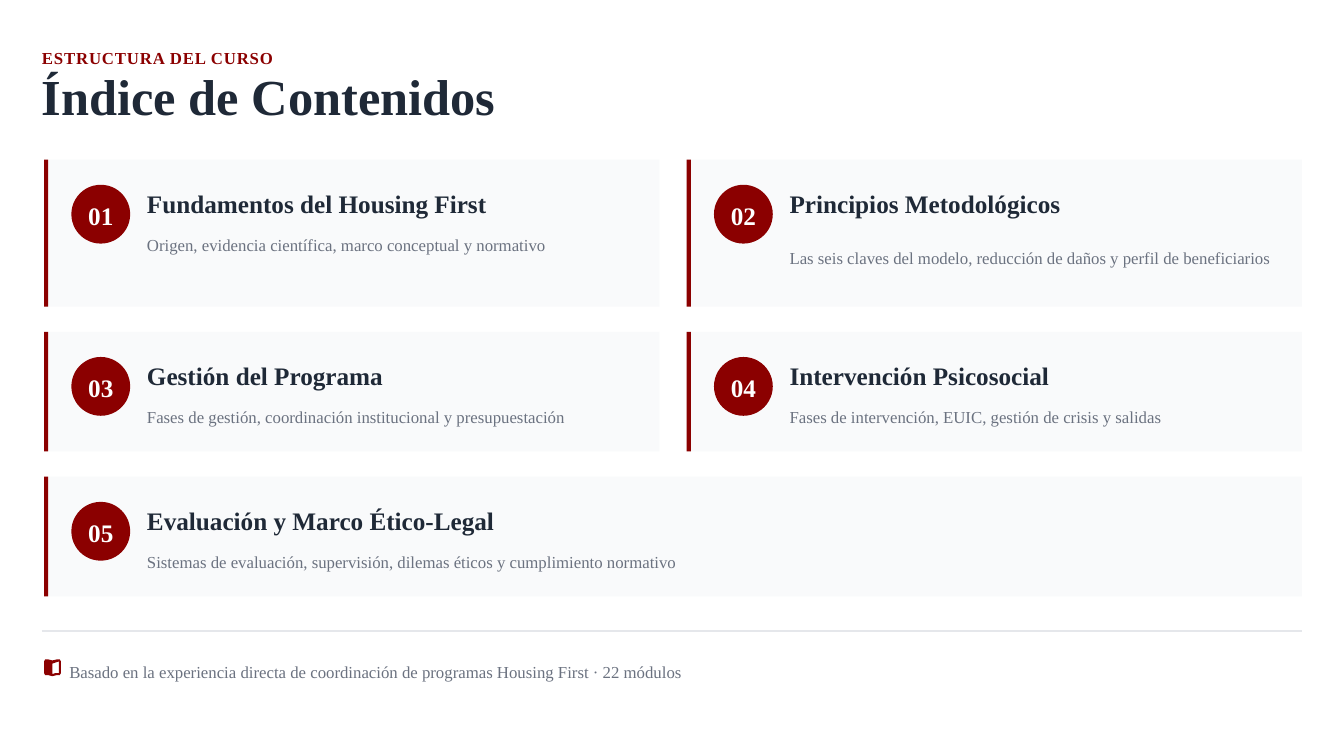
from pptx import Presentation
from pptx.dml.color import RGBColor
from pptx.enum.shapes import MSO_CONNECTOR, MSO_SHAPE
from pptx.enum.text import MSO_ANCHOR, MSO_AUTO_SIZE, PP_ALIGN
from pptx.util import Pt
from lxml.etree import SubElement
from pptx.oxml.ns import qn

PX = 9525
FONT = "Times New Roman"
RED, INK, GRAY, PANEL, RULE, WHITE = "8B0000", "1F2937", "6B7280", "F9FAFB", "E5E7EB", "FFFFFF"
LEFT, TOP, RIGHT = 42, 152, 1240
COLUMN_GAP, ROW_GAP = 26, 24

ROWS = [
    (140, [
        ("Fundamentos del Housing First", "Origen, evidencia científica, marco conceptual y normativo", 26),
        ("Principios Metodológicos",
         "Las seis claves del modelo, reducción de daños y perfil de beneficiarios", 52),
    ]),
    (114, [
        ("Gestión del Programa", "Fases de gestión, coordinación institucional y presupuestación", 26),
        ("Intervención Psicosocial", "Fases de intervención, EUIC, gestión de crisis y salidas", 26),
    ]),
    (114, [
        ("Evaluación y Marco Ético-Legal",
         "Sistemas de evaluación, supervisión, dilemas éticos y cumplimiento normativo", 26),
    ]),
]

BOOK_COVER = [(0, 2), (1, 0), (4, 0), (8, 1), (12, 0), (15, 0), (16, 2),
              (16, 13), (15, 15), (12, 15), (8, 16), (4, 15), (1, 15), (0, 13)]
BOOK_PAGE = [(8, 4), (8, 14), (11, 13), (14, 13), (14, 2), (11, 3)]


def emu(*lengths):
    """Turn pixel lengths into EMU."""
    return [length * PX for length in lengths]


def color(value):
    """Turn a hex string into a colour."""
    return RGBColor.from_string(value)


def apply(target, values):
    """Set each attribute named in a dict of format values."""
    for name, value in values.items():
        setattr(target, name, value)


def paint(shape, fill):
    """Give a shape a plain fill without line or shadow."""
    shape.shadow.inherit = False
    shape.fill.solid()
    shape.fill.fore_color.rgb = color(fill)
    shape.line.fill.background()


def add_block(page, box, fill, kind=MSO_SHAPE.RECTANGLE):
    """Add a plain filled preset shape."""
    paint(page.shapes.add_shape(kind, *emu(*box)), fill)


def write(shape, text, size, fill, spacing, bold=False, align=PP_ALIGN.LEFT):
    """Write one formatted paragraph into a shape and return its run."""
    frame = shape.text_frame
    apply(frame, dict(word_wrap=True, auto_size=MSO_AUTO_SIZE.NONE,
                      vertical_anchor=MSO_ANCHOR.MIDDLE, margin_left=0,
                      margin_right=0, margin_top=0, margin_bottom=0))
    para = frame.paragraphs[0]
    apply(para, dict(alignment=align, line_spacing=spacing))
    span = para.add_run()
    span.text = text
    apply(span.font, dict(name=FONT, size=Pt(size), bold=bold))
    span.font.color.rgb = color(fill)
    return span


def add_text(page, box, *content, **format_values):
    """Add a text box with one formatted paragraph."""
    return write(page.shapes.add_textbox(*emu(*box)), *content, **format_values)


def add_header(page, left, top, width):
    """Place the kicker and the slide title."""
    kicker = add_text(page, (left, top, width, 24), "ESTRUCTURA DEL CURSO", 12, RED, 1.3, bold=True)
    kicker.font.size = Pt(12)
    kicker._r.get_or_add_rPr().set("spc", "60")
    title = page.shapes.title
    apply(title, dict(zip(("left", "top", "width", "height"), emu(left, top + 32, width, 48))))
    write(title, "Índice de Contenidos", 36, INK, 0.8, bold=True)


def add_card(page, box, number, heading, summary, summary_height):
    """Place one numbered content card inside its box."""
    left, top, width, height = box
    text_left, text_width = left + 98, width - 114
    add_block(page, box, PANEL)
    add_block(page, (left, top, 4, height), RED)
    add_block(page, (left + 26, top + 24, 56, 56), RED, MSO_SHAPE.OVAL)
    add_text(page, (left + 20, top + 24, 68, 56), f"{number:02}", 18, WHITE, 1.1,
             bold=True, align=PP_ALIGN.CENTER)
    add_text(page, (text_left, top + 24, text_width, 32), heading, 18, INK, 1.1, bold=True)
    add_text(page, (text_left, top + 64, text_width, summary_height), summary, 12, GRAY, 1.4)


def add_cards(page, left, top, right):
    """Lay the cards out in rows that share the full width."""
    number = 1
    for height, cards in ROWS:
        width = (right - left - COLUMN_GAP * (len(cards) - 1)) // len(cards)
        for column, card in enumerate(cards):
            card_left = left + column * (width + COLUMN_GAP)
            add_card(page, (card_left, top, width, height), number, *card)
            number += 1
        top += height + ROW_GAP


def add_book(page, left, top):
    """Draw the open book icon."""
    cover, inner = ([(left + x, top + y) for x, y in points] for points in (BOOK_COVER, BOOK_PAGE))
    builder = page.shapes.build_freeform(*cover[0], scale=PX)
    builder.add_line_segments(cover[1:], close=True)
    builder.move_to(*inner[0])
    builder.add_line_segments(inner[1:], close=True)
    paint(builder.convert_to_shape(), RED)


def add_footer(page, left, top, right):
    """Place the rule, the icon and the closing note."""
    rule = page.shapes.add_connector(MSO_CONNECTOR.STRAIGHT, *emu(left, top, right, top))
    rule.line.color.rgb = color(RULE)
    rule.line.width = Pt(1)
    SubElement(rule._element.spPr, qn("a:effectLst"))
    add_book(page, left + 2, top + 27)
    add_text(page, (left + 26, top + 24, right - left - 26, 24),
             "Basado en la experiencia directa de coordinación de programas Housing First · 22 módulos",
             12, GRAY, 1.3)


def main():
    """Build and save the slide."""
    deck = Presentation()
    deck.slide_width, deck.slide_height = emu(1280, 720)
    page = deck.slides.add_slide(deck.slide_layouts[5])
    page.background.fill.solid()
    page.background.fill.fore_color.rgb = color(WHITE)
    add_header(page, 40, 40, 1200)
    add_cards(page, LEFT, TOP, RIGHT)
    add_footer(page, 40, 601, RIGHT)
    deck.save("out.pptx")


if __name__ == "__main__":
    main()
